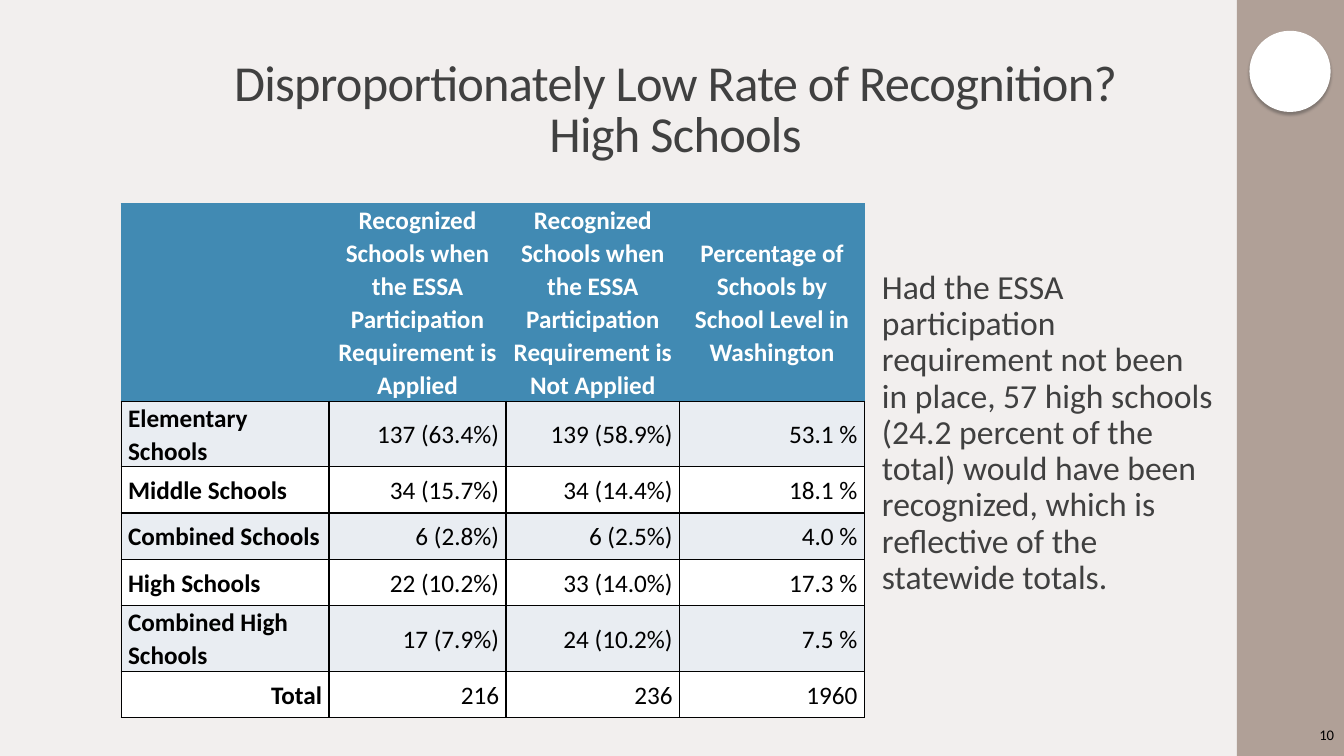
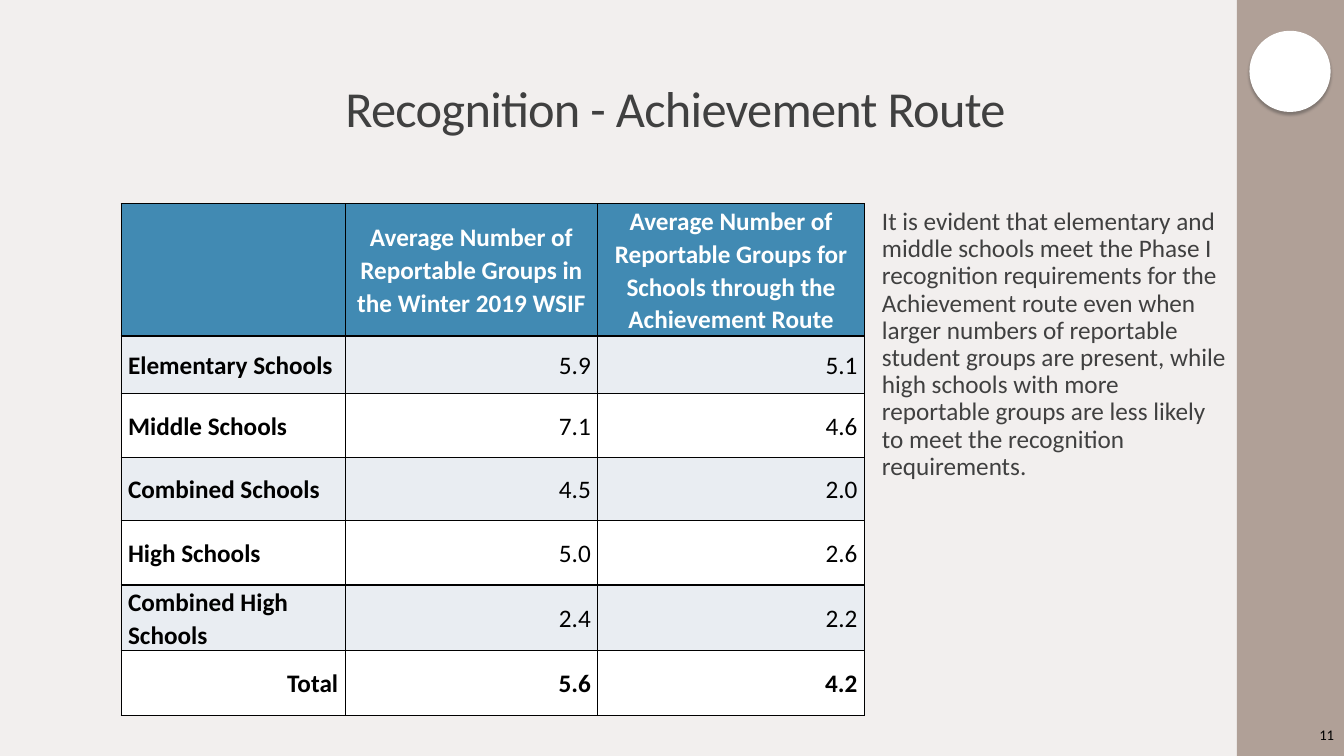
from dataclasses import dataclass

import lxml.etree
import pptx
import pptx.dml.color
import pptx.enum.shapes
import pptx.enum.text
import pptx.oxml.ns
import pptx.util

Pt = pptx.util.Pt
ALIGN = pptx.enum.text.PP_ALIGN
ANCHOR = pptx.enum.text.MSO_ANCHOR
SHAPE = pptx.enum.shapes.MSO_SHAPE


@dataclass(frozen=True)
class Theme:
    font: str = "Calibri"
    page: str = "F2EFEE"
    rail: str = "B0A097"
    ink: str = "404040"
    black: str = "000000"
    white: str = "FFFFFF"
    head: str = "418AB3"
    band: str = "E9EDF2"
    shade: str = "373737"
    title: float = 36
    lead: float = 24
    text: float = 18
    small: float = 10.5


def rgb(code):
    return pptx.dml.color.RGBColor.from_string(code)


def add(parent, tag, **attrs):
    """Append a DrawingML child element."""
    return lxml.etree.SubElement(parent, pptx.oxml.ns.qn("a:" + tag), attrs)


class Deck:
    WIDE, HIGH = 960, 540
    RAIL = 883.5
    LEFT, TOP = 86.5, 145.5
    SIDE = 630

    def __init__(self, theme):
        self.theme = theme
        self.show = pptx.Presentation()
        self.show.slide_width = Pt(self.WIDE)
        self.show.slide_height = Pt(self.HIGH)
        self.slide = None

    def start(self, title, page):
        """Open a slide with its rail, disc, title and page number."""
        self.slide = self.show.slides.add_slide(self.show.slide_layouts[6])
        fill = self.slide.background.fill
        fill.solid()
        fill.fore_color.rgb = rgb(self.theme.page)
        width = self.WIDE - self.RAIL
        self.shape(SHAPE.RECTANGLE, self.RAIL, 0, width, self.HIGH, self.theme.rail)
        self.disc()
        self.title(title)
        frame = self.box(self.RAIL, 510.5, width, 29, ANCHOR.MIDDLE)
        self.label(frame, str(page), self.theme.small, self.theme.black, ALIGN.RIGHT)

    def shape(self, kind, left, top, width, height, color):
        item = self.slide.shapes.add_shape(kind, Pt(left), Pt(top), Pt(width), Pt(height))
        item.shadow.inherit = False
        item.fill.solid()
        item.fill.fore_color.rgb = rgb(color)
        item.line.fill.background()
        return item

    def disc(self):
        item = self.shape(SHAPE.OVAL, 892.5, 22, 58, 58, self.theme.white)
        effects = item.element.spPr.find(pptx.oxml.ns.qn("a:effectLst"))
        depth = str(Pt(2))
        cast = add(effects, "outerShdw", blurRad=depth, dist=depth,
                   dir="5400000", algn="ctr", rotWithShape="0")
        add(add(cast, "srgbClr", val=self.theme.shade), "alpha", val="40000")

    def box(self, left, top, width, height, anchor=ANCHOR.TOP):
        item = self.slide.shapes.add_textbox(Pt(left), Pt(top), Pt(width), Pt(height))
        frame = item.text_frame
        frame.word_wrap = True
        frame.vertical_anchor = anchor
        return frame

    def label(self, frame, text, size, color, align=ALIGN.LEFT, lines=1.0, bold=False):
        """Set and style the text of a frame."""
        frame.text = text
        for para in frame.paragraphs:
            para.alignment = align
            para.line_spacing = lines
            for run in para.runs:
                run.font.name = self.theme.font
                run.font.size = Pt(size)
                run.font.bold = bold
                run.font.color.rgb = rgb(color)

    def title(self, lines):
        frame = self.box(self.LEFT, 22.5, 792, 114.5, ANCHOR.MIDDLE)
        self.label(frame, lines, self.theme.title, self.theme.ink, ALIGN.CENTER, 0.85)
        for para in frame.paragraphs:
            for run in para.runs:
                run._r.get_or_add_rPr().set("spc", "-50")

    def body(self, text, size, top, width, height):
        frame = self.box(self.SIDE, top, width, height)
        frame.margin_left = frame.margin_right = 0
        self.label(frame, text, size, self.theme.ink, lines=0.9)

    def edge(self, cell, colors):
        """Draw the left, right, top and bottom borders, in that order."""
        props = cell._tc.get_or_add_tcPr()
        for side, color in zip("LRTB", colors):
            line = add(props, "ln" + side, w=str(Pt(1)))
            add(add(line, "solidFill"), "srgbClr", val=color)

    def cell(self, cell, text, row, col, total, rim, strong):
        theme = self.theme
        top = row == 0
        color = theme.white if top else theme.black
        fill = theme.head if top else theme.band if row % 2 else theme.white
        if top:
            align = ALIGN.CENTER
        else:
            align = ALIGN.RIGHT if col or total else ALIGN.LEFT
        cell.margin_left = cell.margin_right = Pt(5)
        cell.margin_top = cell.margin_bottom = 0
        cell.vertical_anchor = ANCHOR.MIDDLE
        bold = top or col == 0 or (total and strong)
        self.label(cell.text_frame, text, theme.text, color, align, 1.07, bold)
        side = rim if top else theme.black
        self.edge(cell, (side, side, side, theme.black))
        cell.fill.solid()
        cell.fill.fore_color.rgb = rgb(fill)

    def table(self, rows, widths, heights, rim, strong=False):
        """Draw the grid; rim colours the header's borders, strong bolds the totals."""
        grid = self.slide.shapes.add_table(
            len(rows), len(widths), Pt(self.LEFT), Pt(self.TOP),
            Pt(sum(widths)), Pt(sum(heights))).table
        grid.horz_banding = False
        for col, width in zip(grid.columns, widths):
            col.width = Pt(width)
        for row, height in zip(grid.rows, heights):
            row.height = Pt(height)
        for r, row in enumerate(rows):
            for c, text in enumerate(row):
                self.cell(grid.cell(r, c), text, r, c, r == len(rows) - 1, rim, strong)


LEVELS = ("Elementary Schools", "Middle Schools", "Combined Schools",
          "High Schools", "Combined High Schools", "Total")


def frame_rows(heads, values):
    """Put the header row and the school levels around the values."""
    return [("", *heads)] + [(name, *row) for name, row in zip(LEVELS, values)]


def main():
    theme = Theme()
    deck = Deck(theme)

    deck.start("Disproportionately Low Rate of Recognition?\nHigh Schools", 10)
    rates = frame_rows(
        ("Recognized Schools when the ESSA Participation Requirement is Applied",
         "Recognized Schools when the ESSA Participation Requirement is\nNot Applied",
         "Percentage of Schools by School Level in Washington"),
        (("137 (63.4%)", "139 (58.9%)", "53.1 %"),
         ("34 (15.7%)", "34 (14.4%)", "18.1 %"),
         ("6 (2.8%)", "6 (2.5%)", "4.0 %"),
         ("22 (10.2%)", "33 (14.0%)", "17.3 %"),
         ("17 (7.9%)", "24 (10.2%)", "7.5 %"),
         ("216", "236", "1960")))
    deck.table(rates, (148.5, 126.5, 124, 132), (141, 47, 33, 33, 33, 47, 33), theme.head)
    deck.body("Had the ESSA participation requirement not been in place, 57 high schools "
              "(24.2 percent of the total) would have been recognized, which is "
              "reflective of the statewide totals.", theme.lead, 189.5, 239, 286)

    deck.start("Recognition - Achievement Route", 11)
    groups = frame_rows(
        ("Average Number of Reportable Groups in the Winter 2019 WSIF",
         "Average Number of Reportable Groups for Schools through the Achievement Route"),
        (("5.9", "5.1"), ("7.1", "4.6"), ("4.5", "2.0"),
         ("5.0", "2.6"), ("2.4", "2.2"), ("5.6", "4.2")))
    deck.table(groups, (160, 180.5, 190.5), (94.5, 41, 46, 45, 46, 47, 46),
               theme.black, strong=True)
    deck.body("It is evident that elementary and middle schools meet the Phase I "
              "recognition requirements for the Achievement route even when larger "
              "numbers of reportable student groups are present, while high schools "
              "with more reportable groups are less likely to meet the recognition "
              "requirements.", theme.text, deck.TOP, 248.5, 330)

    deck.show.save("out.pptx")


if __name__ == "__main__":
    main()
